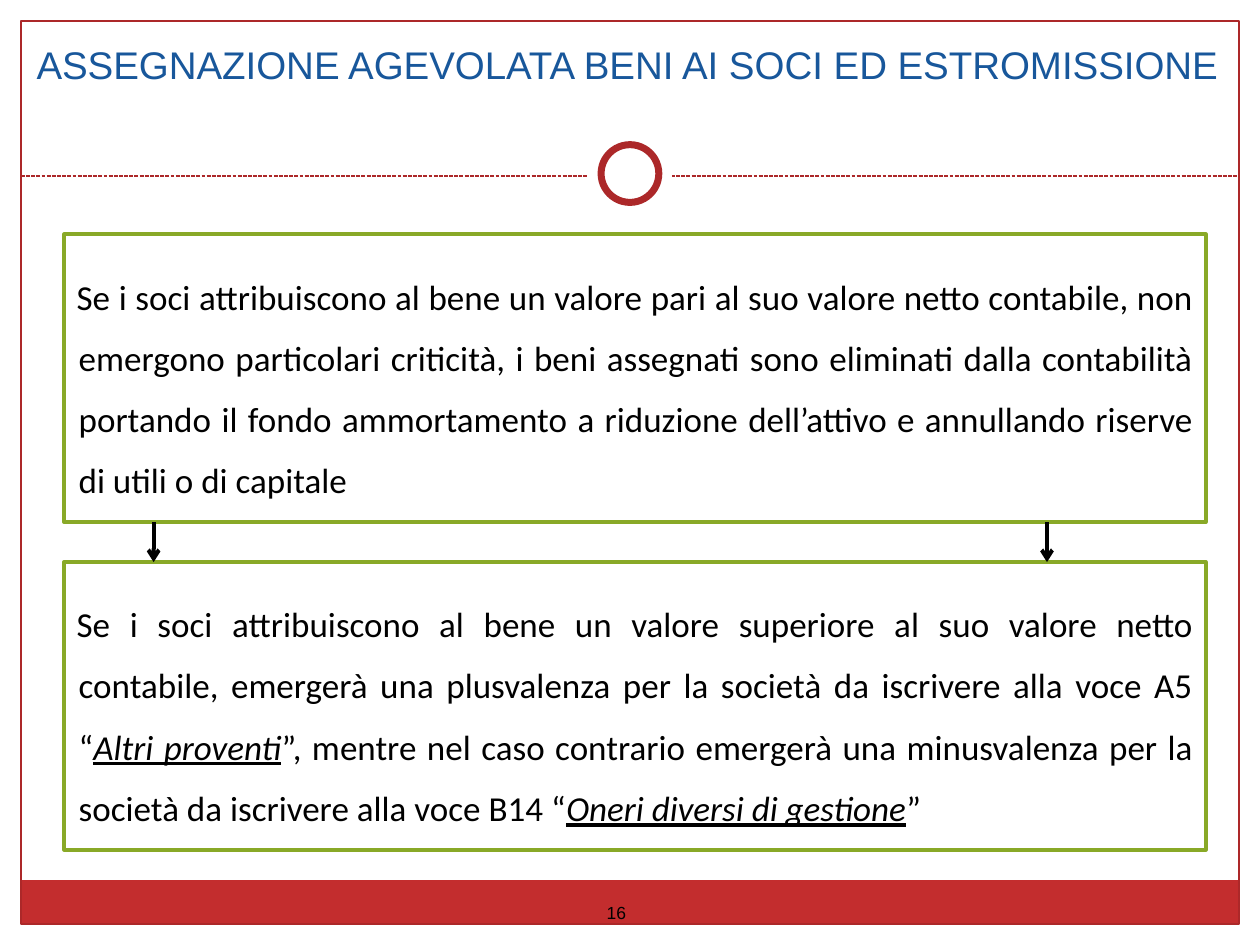
from dataclasses import dataclass

from lxml.etree import SubElement
from pptx import Presentation
from pptx.dml.color import RGBColor
from pptx.enum.dml import MSO_LINE
from pptx.enum.shapes import MSO_CONNECTOR, MSO_SHAPE
from pptx.enum.text import MSO_ANCHOR, PP_ALIGN
from pptx.oxml.ns import qn
from pptx.util import Pt


@dataclass(frozen=True)
class Theme:
    blue: str = "18579B"
    red: str = "C32D2E"
    dark_red: str = "AC2829"
    green: str = "89A927"
    black: str = "000000"
    white: str = "FFFFFF"
    heading_font: str = "Arial"
    body_font: str = "Calibri"
    title_size: float = 22
    body_size: float = 20
    number_size: float = 10


THEME = Theme()
EMPHASIS = {"italic": True, "underline": True}


class SlideBuilder:
    def __init__(self, presentation, theme):
        self.theme = theme
        self.slide = presentation.slides.add_slide(presentation.slide_layouts[5])

    def set_text(self, shape, runs, font, size, color, anchor, paragraph_format):
        """Fill a shape with one paragraph; runs are (text, font values) pairs."""
        frame = shape.text_frame
        frame.word_wrap = True
        frame.vertical_anchor = anchor
        paragraph = frame.paragraphs[0]
        for name, value in paragraph_format.items():
            setattr(paragraph, name, value)
        for text, extra in runs:
            run = paragraph.add_run()
            run.text = text
            run.font.color.rgb = RGBColor.from_string(color)
            values = {"name": font, "size": Pt(size), "bold": False, **extra}
            for name, value in values.items():
                setattr(run.font, name, value)

    def title(self, text, left, top, width, height):
        shape = self.slide.shapes.title
        place = {"left": left, "top": top, "width": width, "height": height}
        for name, value in place.items():
            setattr(shape, name, Pt(value))
        self.set_text(shape, [(text, {})], self.theme.heading_font,
                      self.theme.title_size, self.theme.blue, MSO_ANCHOR.TOP,
                      {"alignment": PP_ALIGN.CENTER, "space_before": Pt(4)})

    def shape(self, kind, left, top, width, height, fill=None, line=None, weight=0.75):
        shape = self.slide.shapes.add_shape(
            kind, Pt(left), Pt(top), Pt(width), Pt(height))
        shape.shadow.inherit = False
        if fill:
            shape.fill.solid()
            shape.fill.fore_color.rgb = RGBColor.from_string(fill)
        else:
            shape.fill.background()
        if line:
            shape.line.color.rgb = RGBColor.from_string(line)
            shape.line.width = Pt(weight)
        else:
            shape.line.fill.background()
        return shape

    def circle(self, center_x, center_y, diameter, **style):
        radius = diameter / 2
        self.shape(MSO_SHAPE.OVAL, center_x - radius, center_y - radius,
                   diameter, diameter, **style)

    def text_panel(self, runs, left, top, width, height):
        panel = self.shape(MSO_SHAPE.RECTANGLE, left, top, width, height,
                           line=self.theme.green, weight=2.25)
        self.set_text(panel, runs, self.theme.body_font, self.theme.body_size,
                      self.theme.black, MSO_ANCHOR.MIDDLE,
                      {"alignment": PP_ALIGN.JUSTIFY, "line_spacing": Pt(35),
                       "space_before": Pt(5)})
        properties = panel.text_frame.paragraphs[0]._p.get_or_add_pPr()
        properties.set("marL", str(Pt(1.2)))
        properties.set("indent", str(-Pt(1.2)))

    def slide_number(self, text, left, top, width, height):
        box = self.slide.shapes.add_textbox(Pt(left), Pt(top), Pt(width), Pt(height))
        self.set_text(box, [(text, {})], self.theme.heading_font,
                      self.theme.number_size, self.theme.black, MSO_ANCHOR.MIDDLE,
                      {"alignment": PP_ALIGN.CENTER})

    def line(self, start, end, color, weight, dash=None, arrow=False):
        connector = self.slide.shapes.add_connector(
            MSO_CONNECTOR.STRAIGHT, *(Pt(value) for value in (*start, *end)))
        connector.line.color.rgb = RGBColor.from_string(color)
        connector.line.width = Pt(weight)
        if dash:
            connector.line.dash_style = dash
        properties = connector._element.spPr
        if arrow:
            SubElement(properties.get_or_add_ln(), qn("a:tailEnd"), type="arrow")
        SubElement(properties, qn("a:effectLst"))


def main():
    presentation = Presentation()
    presentation.slide_width, presentation.slide_height = Pt(720), Pt(540)
    builder = SlideBuilder(presentation, THEME)

    margin, right, bottom = 12, 708, 528
    builder.shape(MSO_SHAPE.RECTANGLE, margin, 503, right - margin, 25, fill=THEME.red)
    builder.shape(MSO_SHAPE.RECTANGLE, margin, margin, right - margin,
                  bottom - margin, line=THEME.dark_red)
    builder.line((margin, 100.6), (right, 100.6), THEME.dark_red, 0.75,
                 dash=MSO_LINE.SQUARE_DOT)
    builder.circle(360, 99.2, 48, fill=THEME.white)
    builder.circle(360, 99.2, 33, fill=THEME.white, line=THEME.dark_red, weight=4)

    builder.title("ASSEGNAZIONE AGEVOLATA BENI AI SOCI ED ESTROMISSIONE",
                  8.5, 20, 700, 39.6)

    panels = [
        [("Se i soci attribuiscono al bene un valore pari al suo valore netto "
          "contabile, non emergono particolari criticità, i beni assegnati sono "
          "eliminati dalla contabilità portando il fondo ammortamento a riduzione "
          "dell’attivo e annullando riserve di utili o di capitale", {})],
        [("Se i soci attribuiscono al bene un valore superiore al suo valore netto "
          "contabile, emergerà una plusvalenza per la società da iscrivere alla "
          "voce A5 “", {}),
         ("Altri proventi", EMPHASIS),
         ("”, mentre nel caso contrario emergerà una minusvalenza per la società "
          "da iscrivere alla voce B14 “", {}),
         ("Oneri diversi di gestione", EMPHASIS),
         ("”", {})],
    ]
    panel_top, panel_height, gap = 134, 164.4, 22.8
    for index, runs in enumerate(panels):
        builder.text_panel(runs, 36.7, panel_top + index * (panel_height + gap),
                           652.3, panel_height)

    arrow_top = panel_top + panel_height
    for arrow_x in (87.8, 598.3):
        builder.line((arrow_x, arrow_top), (arrow_x, arrow_top + gap),
                     THEME.black, 2.25, arrow=True)

    builder.slide_number("16", 337.5, 512, 29.5, 18.7)
    presentation.save("out.pptx")


if __name__ == "__main__":
    main()
